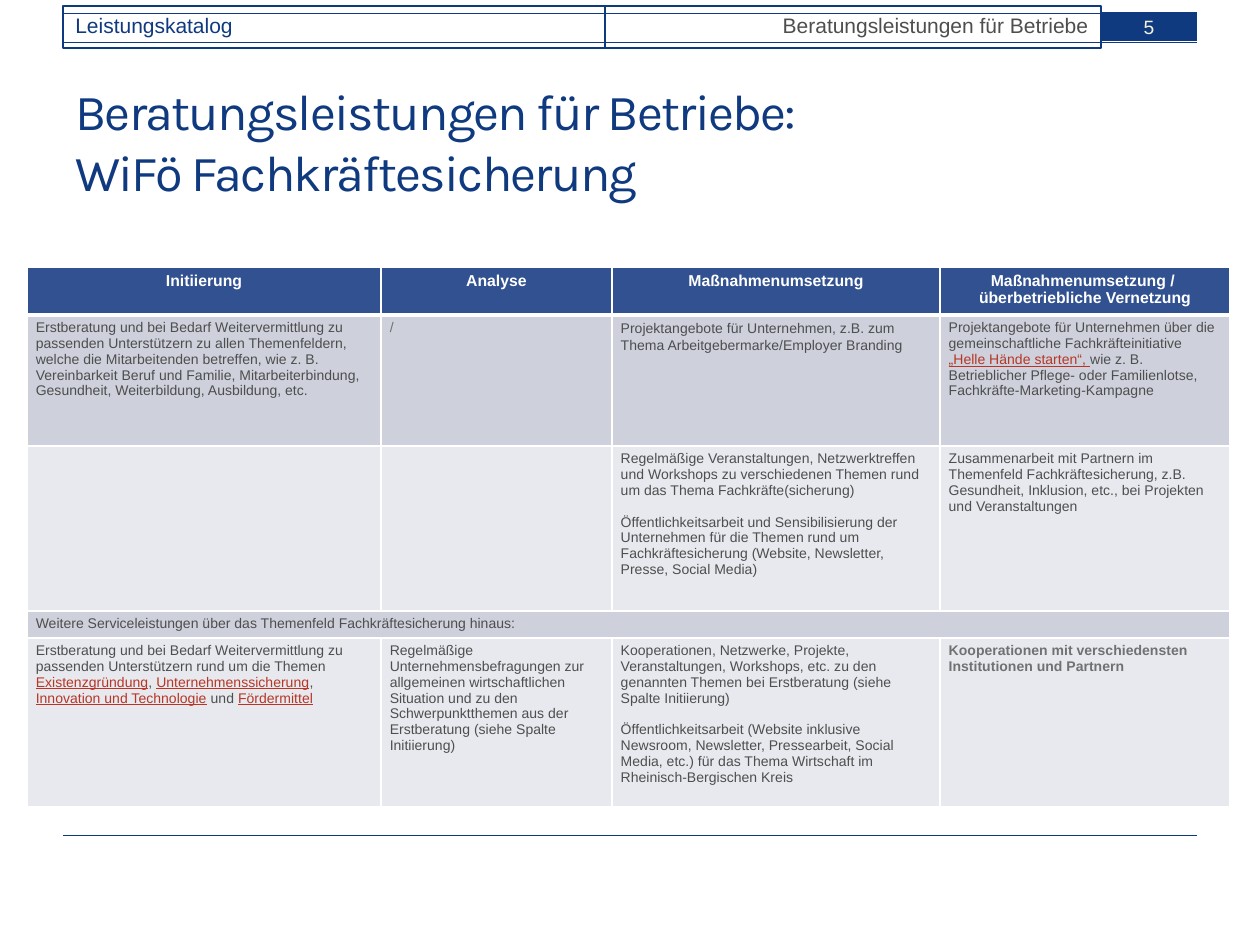
"""Builds the service catalogue slide on securing skilled workers."""
from dataclasses import dataclass

from lxml.etree import SubElement
from pptx import Presentation
from pptx.dml.color import RGBColor
from pptx.enum.shapes import MSO_CONNECTOR as Connector, MSO_SHAPE as Shape
from pptx.enum.text import MSO_ANCHOR as Anchor, PP_ALIGN as Align
from pptx.oxml.ns import qn
from pptx.util import Emu, Inches, Pt


@dataclass(frozen=True)
class Theme:
    navy: str = "103A7F"
    header: str = "315190"
    dark_band: str = "CED0DB"
    light_band: str = "E8E9EE"
    text: str = "4E4E4E"
    muted: str = "717171"
    link: str = "B73625"
    cream: str = "F3F2DC"
    white: str = "FFFFFF"
    font: str = "Arial"
    title_font: str = "Karla"
    title_size: float = 28.8
    bar_size: int = 12
    number_size: int = 11
    header_size: int = 9
    body_size: int = 8
    paragraph_gap: float = 9.2


THEME = Theme()
PX = Inches(1) / 126

TITLE = "Beratungsleistungen für Betriebe: \vWiFö Fachkräftesicherung"
TITLE_BOX = (63, 73, 1134, 136)
RULES = (42, 13, 835)
RULE_ENDS = (63, 1197)
BARS = [
    ("Leistungskatalog", (63, 6, 542, 42), Align.LEFT, THEME.navy),
    ("Beratungsleistungen für Betriebe", (605, 6, 496, 42), Align.RIGHT, THEME.text),
]
PAGE_NUMBER = ("5", (1101, 12, 96, 29))

TABLE_ORIGIN = (27, 267)
COLUMNS = (354, 231, 328, 290)
ROWS = (47, 131, 165, 27, 169)
HEADINGS = ["Initiierung", "Analyse", "Maßnahmenumsetzung",
            "Maßnahmenumsetzung / \vüberbetriebliche Vernetzung"]
LINK_MARK = "|"
BODY = [
    [
        ["Erstberatung und bei Bedarf Weitervermittlung zu passenden Unterstützern zu allen "
         "Themenfeldern, welche die Mitarbeitenden betreffen, wie z. B. Vereinbarkeit Beruf und "
         "Familie, Mitarbeiterbindung, Gesundheit, Weiterbildung, Ausbildung, etc."],
        ["/"],
        ["Projektangebote für Unternehmen, z.B. zum Thema Arbeitgebermarke/Employer Branding"],
        ["Projektangebote für Unternehmen über die gemeinschaftliche Fachkräfteinitiative "
         "|„Helle Hände starten“, |wie z. B. Betrieblicher Pflege- oder Familienlotse, "
         "Fachkräfte-Marketing-Kampagne"],
    ],
    [
        [],
        [],
        ["Regelmäßige Veranstaltungen, Netzwerktreffen und Workshops zu verschiedenen Themen "
         "rund um das Thema Fachkräfte(sicherung)",
         "Öffentlichkeitsarbeit und Sensibilisierung der Unternehmen für die Themen rund um "
         "Fachkräftesicherung (Website, Newsletter, Presse, Social Media)"],
        ["Zusammenarbeit mit Partnern im Themenfeld Fachkräftesicherung, z.B. Gesundheit, "
         "Inklusion, etc., bei Projekten und Veranstaltungen"],
    ],
    [
        ["Weitere Serviceleistungen über das Themenfeld Fachkräftesicherung hinaus:"],
    ],
    [
        ["Erstberatung und bei Bedarf Weitervermittlung zu passenden Unterstützern rund um die "
         "Themen |Existenzgründung|, |Unternehmenssicherung|, |Innovation und Technologie| und "
         "|Fördermittel|"],
        ["Regelmäßige Unternehmensbefragungen zur allgemeinen wirtschaftlichen Situation und zu "
         "den Schwerpunktthemen aus der Erstberatung (siehe Spalte Initiierung)"],
        ["Kooperationen, Netzwerke, Projekte, Veranstaltungen, Workshops, etc. zu den genannten "
         "Themen bei Erstberatung (siehe Spalte Initiierung)",
         "Öffentlichkeitsarbeit (Website inklusive Newsroom, Newsletter, Pressearbeit, Social "
         "Media, etc.) für das Thema Wirtschaft im Rheinisch-Bergischen Kreis"],
        ["Kooperationen mit verschiedensten Institutionen und Partnern"],
    ],
]
MUTED_CELLS = {(1, 1), (4, 3)}
BOLD_CELLS = {(4, 3)}
LINE_SPACING = {(1, 2): 1.07}


def px(*lengths):
    return [Emu(round(length * PX)) for length in lengths]


def color(value):
    return RGBColor.from_string(value)


def style(run, size, tint, name=THEME.font, bold=False):
    run.font.size = Pt(size)
    run.font.name = name
    run.font.bold = bold
    run.font.color.rgb = color(tint)


def write_line(frame, text, size, tint, align, name=THEME.font, bold=False):
    frame.word_wrap = True
    paragraph = frame.paragraphs[0]
    paragraph.text = text
    paragraph.alignment = align
    for run in paragraph.runs:
        style(run, size, tint, name, bold)
    return paragraph


def add_rule(slide, y):
    left, right = RULE_ENDS
    rule = slide.shapes.add_connector(Connector.STRAIGHT, *px(left, y, right, y))
    rule.line.color.rgb = color(THEME.navy)
    rule.line.width = Pt(0.5)
    SubElement(rule._element.spPr, qn("a:effectLst"))


def add_title(slide):
    frame = slide.shapes.add_textbox(*px(*TITLE_BOX)).text_frame
    frame.vertical_anchor = Anchor.MIDDLE
    paragraph = write_line(frame, TITLE, THEME.title_size, THEME.navy, Align.LEFT, THEME.title_font)
    for run in paragraph.runs:
        run._r.get_or_add_rPr().set("spc", "-100")


def add_bar(slide, text, box, align, tint, size=THEME.bar_size, fill=None):
    bar = slide.shapes.add_shape(Shape.RECTANGLE, *px(*box))
    bar.shadow.inherit = False
    if fill:
        bar.fill.solid()
        bar.fill.fore_color.rgb = color(fill)
        bar.line.fill.background()
    else:
        bar.fill.background()
        bar.line.color.rgb = color(THEME.navy)
        bar.line.width = Pt(0.75)
    bar.text_frame.vertical_anchor = Anchor.MIDDLE if fill else Anchor.TOP
    write_line(bar.text_frame, text, size, tint, align)


def format_cell(cell, fill, bottom):
    cell.margin_left = cell.margin_right = Inches(0.07)
    cell.margin_top = cell.margin_bottom = Inches(0.04)
    properties = cell._tc.get_or_add_tcPr()
    for side, width in (("L", 1), ("R", 1), ("T", 1), ("B", bottom)):
        border = SubElement(properties, qn(f"a:ln{side}"), w=str(Pt(width)))
        SubElement(SubElement(border, qn("a:solidFill")), qn("a:srgbClr"), val=THEME.white)
    cell.fill.solid()
    cell.fill.fore_color.rgb = color(fill)


def write_body(cell, texts, position):
    tint = THEME.muted if position in MUTED_CELLS else THEME.text
    for index, text in enumerate(texts):
        frame = cell.text_frame
        paragraph = frame.add_paragraph() if index else frame.paragraphs[0]
        if index:
            paragraph.space_before = Pt(THEME.paragraph_gap)
        paragraph.line_spacing = LINE_SPACING.get(position)
        for part, piece in enumerate(text.split(LINK_MARK)):
            if piece:
                run = paragraph.add_run()
                run.text = piece
                is_link = part % 2 == 1
                style(run, THEME.body_size, THEME.link if is_link else tint,
                      bold=position in BOLD_CELLS)
                run.font.underline = is_link


def add_services(slide):
    box = px(*TABLE_ORIGIN, sum(COLUMNS), sum(ROWS))
    table = slide.shapes.add_table(len(ROWS), len(COLUMNS), *box).table
    for column, width in zip(table.columns, px(*COLUMNS)):
        column.width = width
    for row, height in zip(table.rows, px(*ROWS)):
        row.height = height
    for index, heading in enumerate(HEADINGS):
        cell = table.cell(0, index)
        format_cell(cell, THEME.header, 3)
        write_line(cell.text_frame, heading, THEME.header_size, THEME.white, Align.CENTER, bold=True)
    for row, cells in enumerate(BODY, 1):
        if len(cells) == 1:
            table.cell(row, 0).merge(table.cell(row, len(COLUMNS) - 1))
        for index in range(len(COLUMNS)):
            format_cell(table.cell(row, index), THEME.dark_band if row % 2 else THEME.light_band, 1)
        for index, texts in enumerate(cells):
            write_body(table.cell(row, index), texts, (row, index))


def main():
    presentation = Presentation()
    presentation.slide_width, presentation.slide_height = px(1260, 945)
    slide = presentation.slides.add_slide(presentation.slide_layouts[6])
    for y in RULES:
        add_rule(slide, y)
    add_title(slide)
    for bar in BARS:
        add_bar(slide, *bar)
    add_bar(slide, *PAGE_NUMBER, Align.CENTER, THEME.cream, THEME.number_size, THEME.navy)
    add_services(slide)
    presentation.save("out.pptx")


if __name__ == "__main__":
    main()
